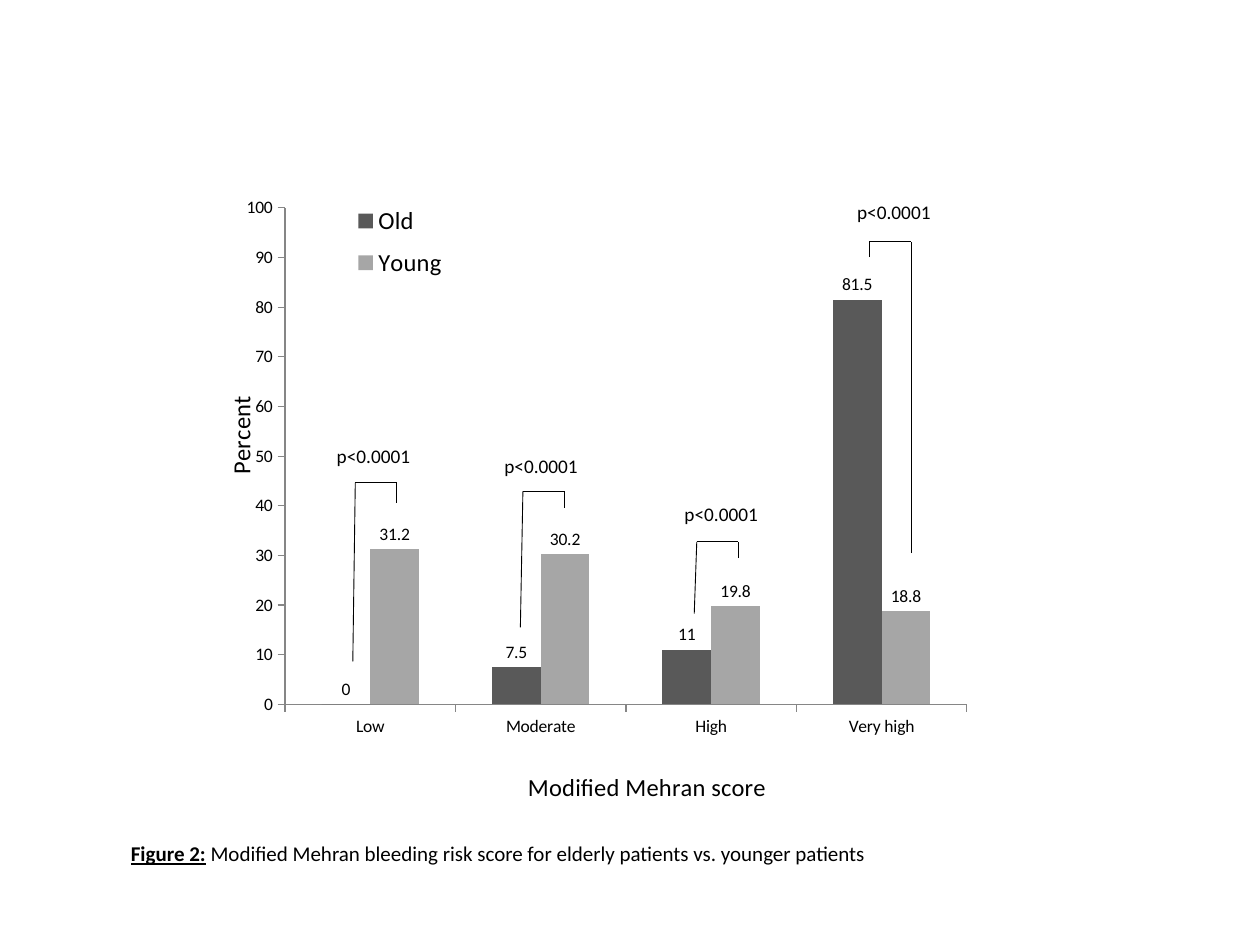
from lxml import etree
from pptx import Presentation
from pptx import util as u
from pptx.chart.data import CategoryChartData
from pptx.dml.color import RGBColor
from pptx.enum import chart as ch, shapes, text
from pptx.oxml.ns import qn

BLACK = RGBColor(0, 0, 0)
DARK = RGBColor(0x59, 0x59, 0x59)
LIGHT = RGBColor(0xA6, 0xA6, 0xA6)
AXIS = RGBColor(0x86, 0x86, 0x86)
FACE = "Calibri"
SPAN = 0.33  # bracket width, from the old bar to the young bar

GROUPS = ["Low", "Moderate", "High", "Very high"]
SERIES = [
    ("Old", [0, 7.5, 11, 81.5], DARK),
    ("Young", [31.2, 30.2, 19.8, 18.8], LIGHT),
]
# bracket left and top, left and right drops, lean; label shift in x and y
MARKS = [
    (2.82, 3.83, 1.42, 0.16, 0.02, -0.27, -0.35),
    (4.15, 3.9, 1.08, 0.13, 0.02, -0.27, -0.34),
    (5.53, 4.3, 0.57, 0.13, 0.02, -0.22, -0.36),
    (6.9, 1.92, 0.12, 2.47, 0, -0.22, -0.38),
]


def style(font, size, bold=False):
    font.name, font.size, font.bold = FACE, u.Pt(size), bold
    font.color.rgb = BLACK


def arrange(part, after, **spots):
    """Give a chart part a manual layout, in shares of the chart."""
    for old in part.findall(qn("c:layout")):
        part.remove(old)
    layout = etree.Element(qn("c:layout"))
    manual = etree.SubElement(layout, qn("c:manualLayout"))
    for tag, val in spots.items():
        etree.SubElement(manual, qn("c:" + tag)).set("val", str(val))
    lead = part.find(qn(after)) if after else None
    part.insert(0 if lead is None else part.index(lead) + 1, layout)


def set_axis(axis, title, x, y):
    axis.has_major_gridlines = False
    axis.major_tick_mark = ch.XL_TICK_MARK.OUTSIDE
    axis.minor_tick_mark = ch.XL_TICK_MARK.NONE
    axis.format.line.color.rgb = AXIS
    style(axis.tick_labels.font, 10)
    para = axis.axis_title.text_frame.paragraphs[0]
    para.text = title
    style(para.font, 14)
    arrange(axis.axis_title._element, "c:tx",
            xMode="edge", yMode="edge", x=x, y=y)


def add_bars(slide, box):
    data = CategoryChartData()
    data.categories = GROUPS
    for name, vals, _ in SERIES:
        data.add_series(name, vals)
    chart = slide.shapes.add_chart(
        ch.XL_CHART_TYPE.COLUMN_CLUSTERED, *map(u.Inches, box), data).chart
    chart.has_title = False
    style(chart.font, 10)

    # Bars and value labels
    plot = chart.plots[0]
    plot.gap_width, plot.overlap, plot.vary_by_categories = 150, 0, False
    for series, (_, _, color) in zip(plot.series, SERIES):
        series.format.fill.solid()
        series.format.fill.fore_color.rgb = color
    plot.has_data_labels = True
    labels = plot.data_labels
    labels.show_value = True
    labels.position = ch.XL_LABEL_POSITION.OUTSIDE_END
    style(labels.font, 10)

    # Axes
    set_axis(chart.category_axis, "Modified Mehran score", 0.41, 0.92)
    set_axis(chart.value_axis, "Percent", 0.04, 0.37)
    scale = chart.value_axis
    scale.minimum_scale, scale.maximum_scale, scale.major_unit = 0, 100, 10

    # Legend and plot area
    chart.has_legend = True
    legend = chart.legend
    legend.position = ch.XL_LEGEND_POSITION.RIGHT
    legend.include_in_layout = False
    style(legend.font, 14)
    arrange(legend._element, "c:legendPos", xMode="edge", yMode="edge",
            x=0.18, y=0.08, w=0.16, h=0.14)
    arrange(chart._chartSpace.chart.plotArea, None, layoutTarget="inner",
            xMode="edge", yMode="edge", x=0.12, y=0.1, w=0.83, h=0.73)


def add_text(slide, box, runs, size, align=text.PP_ALIGN.LEFT):
    frame = slide.shapes.add_textbox(*map(u.Inches, box)).text_frame
    frame.word_wrap = True
    para = frame.paragraphs[0]
    para.alignment = align
    style(para.font, size)
    for words, strong in runs:
        run = para.add_run()
        run.text = words
        style(run.font, size, strong)
        run.font.underline = strong


def add_mark(slide, left, top, drop, fall, lean, dx, dy):
    """Draw a bracket over a pair of bars, with its p value."""
    right = left + SPAN
    for ends in ((left - lean, top + drop, left, top),
                 (left, top, right, top),
                 (right, top + fall, right, top)):
        line = slide.shapes.add_connector(
            shapes.MSO_CONNECTOR.STRAIGHT, *map(u.Inches, ends))
        line.line.color.rgb = BLACK
        line.line.width = u.Pt(0.5)
        etree.SubElement(line._element.spPr, qn("a:effectLst"))
    add_text(slide, (left + dx, top + dy, 0.83, 0.29),
             [("p<0.0001", False)], 11, text.PP_ALIGN.CENTER)


def main():
    deck = Presentation()
    deck.slide_width, deck.slide_height = u.Inches(10), u.Inches(7.5)
    slide = deck.slides.add_slide(deck.slide_layouts[6])
    add_bars(slide, (1.48, 1.11, 6.52, 5.4))
    for mark in MARKS:
        add_mark(slide, *mark)
    # Caption
    add_text(slide, (0.94, 6.62, 7.18, 0.3), [
        ("Figure 2:", True),
        (" Modified Mehran bleeding risk score for elderly patients"
         " vs. younger patients", False)], 12)
    deck.save("out.pptx")


if __name__ == "__main__":
    main()
